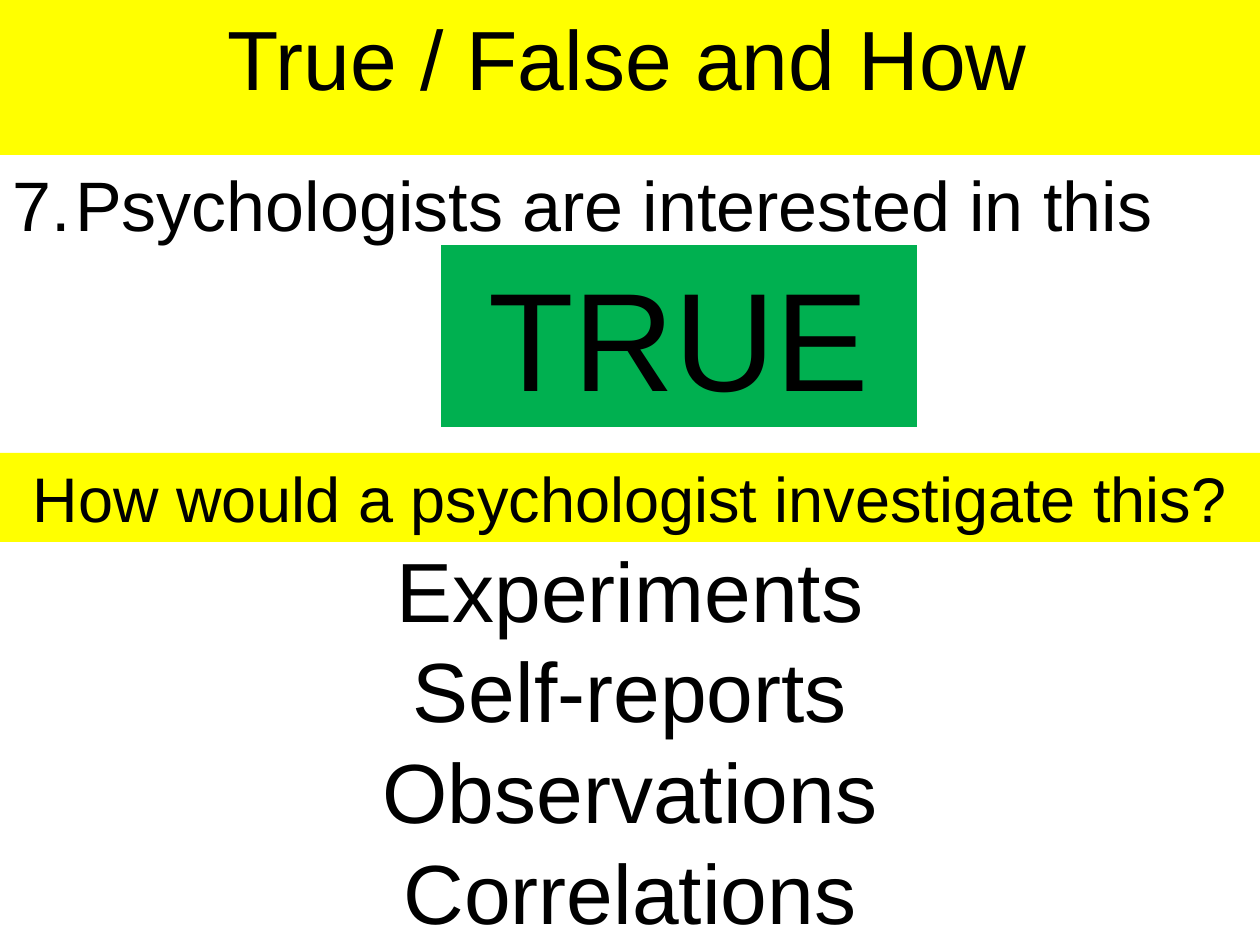
from pptx import Presentation
from pptx.dml.color import RGBColor
from pptx.enum.shapes import MSO_SHAPE as Shape
from pptx.enum.text import MSO_ANCHOR as Anchor, PP_ALIGN as Align
from pptx.util import Emu, Pt

PX = 914400 // 126
WIDTH, HEIGHT = 1260, 945
FONT = "Arial"
COLOURS = {"text": "000000", "band": "FFFF00", "answer": "00B050"}

TITLE = "True / False and How"
STATEMENT = "7.\tPsychologists are interested in this"
ANSWER = "TRUE"
QUESTION = "How would a psychologist investigate this?"
METHODS = ["Experiments", "Self-reports", "Observations", "Correlations"]

# lines, (left, top, width, height), format
BLOCKS = [
    ([TITLE], (-5, 0, 1265, 155), {"size": 48, "fill": "band"}),
    ([STATEMENT], (0, 155, WIDTH, 97), {"size": 40, "align": Align.LEFT}),
    ([ANSWER], (441, 245, 476, 182), {"size": 80, "fill": "answer"}),
    ([QUESTION], (0, 453, WIDTH, 89), {"size": 36, "fill": "band"}),
    (METHODS, (0, 532, WIDTH, HEIGHT), {"size": 48}),
]


def add_text(slide, lines, box, *, size, fill=None, align=Align.CENTER):
    """Add a text box, or a filled rectangle when a fill is named."""
    place = [Emu(length * PX) for length in box]
    if fill:
        shape = slide.shapes.add_shape(Shape.RECTANGLE, *place)
        shape.shadow.inherit = False
        shape.fill.solid()
        shape.fill.fore_color.rgb = RGBColor.from_string(COLOURS[fill])
        shape.line.fill.background()
    else:
        shape = slide.shapes.add_textbox(*place)
    frame = shape.text_frame
    frame.word_wrap = True
    frame.vertical_anchor = Anchor.TOP
    frame.text = "\n".join(lines)
    for paragraph in frame.paragraphs:
        paragraph.alignment = align
        for run in paragraph.runs:
            run.font.name = FONT
            run.font.size = Pt(size)
            run.font.color.rgb = RGBColor.from_string(COLOURS["text"])


def main():
    presentation = Presentation()
    presentation.slide_width = Emu(WIDTH * PX)
    presentation.slide_height = Emu(HEIGHT * PX)
    slide = presentation.slides.add_slide(presentation.slide_layouts[6])
    for lines, box, style in BLOCKS:
        add_text(slide, lines, box, **style)
    presentation.save("out.pptx")


if __name__ == "__main__":
    main()
